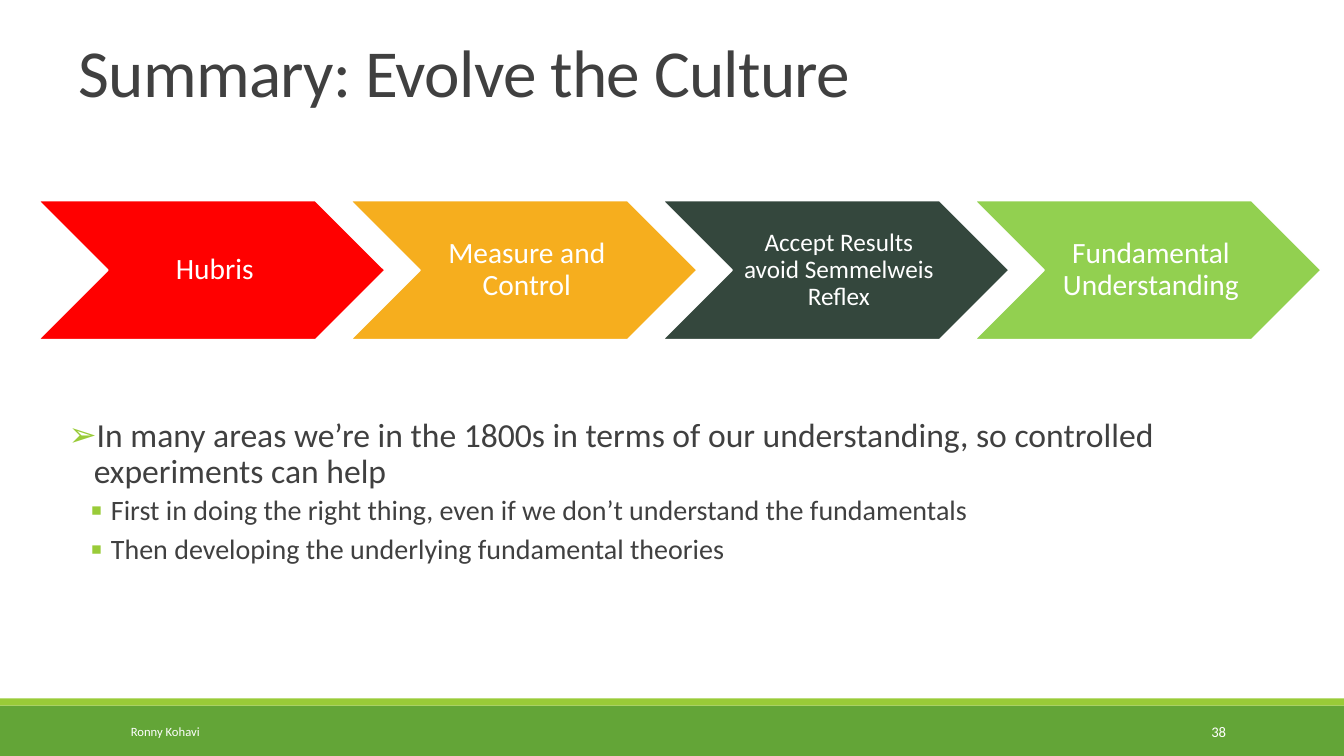
"""Build the summary slide on evolving the culture, with four stages and three points."""
import lxml.etree
import pptx
import pptx.dml.color
import pptx.enum.shapes
import pptx.enum.text
import pptx.oxml.ns
import pptx.util

TITLE = "Summary: Evolve the Culture"
STAGES = [
    ("Hubris", "red", 21),
    ("Measure and Control", "amber", 21),
    ("Accept Results avoid Semmelweis Reflex", "slate", 18),
    ("Fundamental Understanding", "lime", 21),
]
POINTS = [
    (0, "In many areas we’re in the 1800s in terms of our understanding, so controlled experiments can help"),
    (1, "First in doing the right thing, even if we don’t understand the fundamentals"),
    (1, "Then developing the underlying fundamental theories"),
]
LEVELS = [
    dict(size=24, before=12, after=2, bullet=("➢", 0.25, -0.25, 100)),
    dict(size=20, before=2, after=4, bullet=("▪", 0.42, -0.2, 120)),
]
AUTHOR = "Ronny Kohavi"
NUMBER = "38"

COLORS = {"white": "FFFFFF", "text": "404040", "green": "63A537", "accent": "99CB38",
          "red": "FF0000", "amber": "F6AE1E", "slate": "34473D", "lime": "92D050"}
FONT = "Calibri"
WIDTH, HEIGHT = 13.33, 7.5
MARGIN, CONTENT_WIDTH = 0.68, 12.28
FOOTER_TOP, STRIPE = 7.0, 0.07
STAGE_LEFT, STAGE_TOP, STAGE_STEP = 0.38, 1.99, 3.095
STAGE_WIDTH, STAGE_HEIGHT = 3.44, 1.38

SHAPE = pptx.enum.shapes.MSO_SHAPE
ALIGN = pptx.enum.text.PP_ALIGN
ANCHOR = pptx.enum.text.MSO_ANCHOR


def color(name):
    """Return the named colour."""
    return pptx.dml.color.RGBColor.from_string(COLORS[name])


def place(shape, left, top, width, height):
    """Move and size a shape in inches."""
    shape.left, shape.top, shape.width, shape.height = map(
        pptx.util.Inches, (left, top, width, height))


def frame(shape, anchor, insets=(0.1, 0.05, 0.1, 0.05)):
    """Prepare the text frame of a shape and return it."""
    box = shape.text_frame
    box.word_wrap = True
    box.auto_size = pptx.enum.text.MSO_AUTO_SIZE.NONE
    box.vertical_anchor = anchor
    box.margin_left, box.margin_top, box.margin_right, box.margin_bottom = map(
        pptx.util.Inches, insets)
    return box


def write(para, text, size, fill="white", align=ALIGN.LEFT, line=1.0,
          before=0, after=0, spacing=None, bullet=None):
    """Fill a paragraph with formatted text."""
    para.alignment = align
    para.line_spacing = line
    para.space_before = pptx.util.Pt(before)
    para.space_after = pptx.util.Pt(after)
    span = para.add_run()
    span.text = text
    span.font.name = FONT
    span.font.size = pptx.util.Pt(size)
    span.font.color.rgb = color(fill)
    if spacing is not None:
        span.font._element.set("spc", str(int(spacing * 100)))
    if bullet:
        mark, margin, indent, percent = bullet
        tag = pptx.oxml.ns.qn
        settings = para._p.get_or_add_pPr()
        settings.set("marL", str(pptx.util.Inches(margin)))
        settings.set("indent", str(pptx.util.Inches(indent)))
        tint = lxml.etree.SubElement(settings, tag("a:buClr"))
        lxml.etree.SubElement(tint, tag("a:srgbClr"), val=COLORS["accent"])
        lxml.etree.SubElement(settings, tag("a:buSzPct"), val=str(percent * 1000))
        lxml.etree.SubElement(settings, tag("a:buChar"), char=mark)


def add_block(page, kind, fill, *area):
    """Add a flat filled shape."""
    shape = page.shapes.add_shape(kind, 0, 0, 0, 0)
    place(shape, *area)
    shape.shadow.inherit = False
    shape.fill.solid()
    shape.fill.fore_color.rgb = color(fill)
    shape.line.fill.background()
    return shape


def main():
    """Create and save the deck."""
    deck = pptx.Presentation()
    deck.slide_width = pptx.util.Inches(WIDTH)
    deck.slide_height = pptx.util.Inches(HEIGHT)
    page = deck.slides.add_slide(deck.slide_layouts[1])

    add_block(page, SHAPE.RECTANGLE, "green", 0, FOOTER_TOP, WIDTH, HEIGHT - FOOTER_TOP)
    add_block(page, SHAPE.RECTANGLE, "accent", 0, FOOTER_TOP - STRIPE, WIDTH, STRIPE)

    title = page.shapes.title
    place(title, MARGIN, 0.31, CONTENT_WIDTH, 0.84)
    write(frame(title, ANCHOR.BOTTOM).paragraphs[0], TITLE, 48,
          fill="text", line=0.85, spacing=-0.5)

    body = page.placeholders[1]
    place(body, MARGIN, 4.1, CONTENT_WIDTH, 1.96)
    box = frame(body, ANCHOR.TOP, (0, 0.05, 0, 0.05))
    for index, (level, text) in enumerate(POINTS):
        para = box.add_paragraph() if index else box.paragraphs[0]
        para.level = level
        write(para, text, fill="text", line=0.9, **LEVELS[level])

    for text, size, align, left, width in [(AUTHOR, 9, ALIGN.LEFT, 1.2, 2.7),
                                           (NUMBER, 10.5, ALIGN.RIGHT, 10.83, 1.43)]:
        label = page.shapes.add_textbox(0, 0, 0, 0)
        place(label, left, FOOTER_TOP + 0.06, width, 0.4)
        write(frame(label, ANCHOR.MIDDLE).paragraphs[0], text, size, align=align)

    for index, (text, fill, size) in enumerate(STAGES):
        stage = add_block(page, SHAPE.CHEVRON, fill, STAGE_LEFT + index * STAGE_STEP,
                          STAGE_TOP, STAGE_WIDTH, STAGE_HEIGHT)
        stage.line.color.rgb = color("white")
        stage.line.width = pptx.util.Pt(1.25)
        write(frame(stage, ANCHOR.MIDDLE, (0.09, 0.03, 0.03, 0.03)).paragraphs[0],
              text, size, align=ALIGN.CENTER, line=0.9)

    deck.save("out.pptx")


if __name__ == "__main__":
    main()
